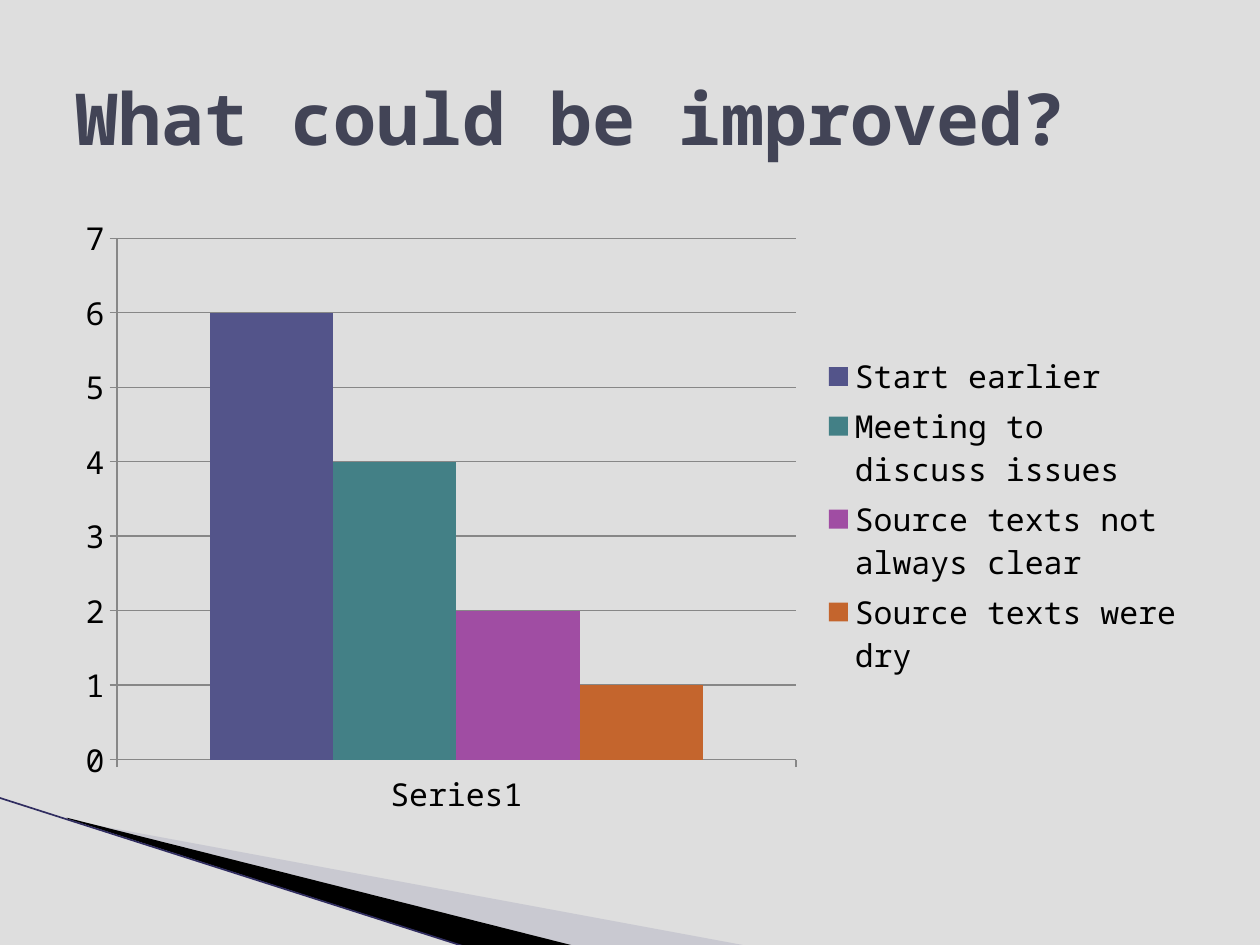
from lxml import etree
from pptx import Presentation, util as u
from pptx.chart.data import CategoryChartData
from pptx.dml.color import RGBColor
from pptx.enum import chart as ch, shapes, text
from pptx.oxml.ns import qn

FONT = "Noto Sans Mono"
GREY = "878787"
SERIES = [
    ("Start earlier", 6, "53548A"),
    ("Meeting to discuss issues", 4, "438086"),
    ("Source texts not always clear", 2, "A04DA3"),
    ("Source texts were dry", 1, "C4652D"),
]


def rgb(value):
    return RGBColor.from_string(value)


def set_all(target, formats):
    for name, value in formats.items():
        setattr(target, name, value)


def paint(fill, color):
    fill.solid()
    fill.fore_color.rgb = rgb(color)


class SlideBuilder:
    def __init__(self, slide):
        self.slide = slide

    def background(self, color):
        paint(self.slide.background.fill, color)

    def wedge(self, points, color, opacity=100):
        corners = [(u.Inches(x), u.Inches(y)) for x, y in points]
        builder = self.slide.shapes.build_freeform(*corners[0])
        builder.add_line_segments(corners[1:], close=True)
        wedge = builder.convert_to_shape()
        wedge.shadow.inherit = False
        wedge.line.fill.background()
        paint(wedge.fill, color)
        if opacity < 100:
            tint = wedge.fill._xPr.find(".//" + qn("a:srgbClr"))
            etree.SubElement(tint, qn("a:alpha"), val=str(opacity * 1000))

    def line(self, start, end, color, width):
        edge = self.slide.shapes.add_connector(
            shapes.MSO_CONNECTOR.STRAIGHT, *map(u.Inches, start + end))
        edge.line.color.rgb = rgb(color)
        edge.line.width = u.Pt(width)
        etree.SubElement(edge._element.spPr, qn("a:effectLst"))

    def title(self, wording, box, size, color):
        title = self.slide.shapes.title
        set_all(title, dict(zip(("left", "top", "width", "height"), map(u.Inches, box))))
        frame = title.text_frame
        frame.text = wording
        set_all(frame, {"word_wrap": True, "auto_size": text.MSO_AUTO_SIZE.NONE,
                        "vertical_anchor": text.MSO_ANCHOR.MIDDLE})
        heading = frame.paragraphs[0]
        heading.alignment = text.PP_ALIGN.LEFT
        set_all(heading.font, {"name": FONT, "size": u.Pt(size), "bold": True})
        heading.font.color.rgb = rgb(color)

    def columns(self, box, category, series):
        votes = CategoryChartData(number_format="General")
        votes.categories = [category]
        for name, value, _ in series:
            votes.add_series(name, [value])
        chart = self.slide.shapes.add_chart(
            ch.XL_CHART_TYPE.COLUMN_CLUSTERED, *map(u.Inches, box), votes).chart
        set_all(chart, {"has_title": False, "has_legend": True})
        set_all(chart.font, {"name": FONT, "size": u.Pt(18)})
        chart.font.color.rgb = rgb("000000")
        set_all(chart.legend, {"position": ch.XL_LEGEND_POSITION.RIGHT,
                               "include_in_layout": False})
        set_all(chart.plots[0], {"gap_width": 150, "overlap": 0,
                                 "vary_by_categories": False})
        for column, (_, _, color) in zip(chart.plots[0].series, series):
            paint(column.format.fill, color)

        # Axes and gridlines
        set_all(chart.value_axis, {"minimum_scale": 0, "maximum_scale": 7,
                                   "major_unit": 1, "has_major_gridlines": True})
        for axis in (chart.category_axis, chart.value_axis):
            axis.major_tick_mark = ch.XL_TICK_MARK.OUTSIDE
            axis.format.line.color.rgb = rgb(GREY)
        chart.value_axis.major_gridlines.format.line.color.rgb = rgb(GREY)


def main():
    deck = Presentation()
    set_all(deck, {"slide_width": u.Inches(10), "slide_height": u.Inches(7.5)})
    page = SlideBuilder(deck.slides.add_slide(deck.slide_layouts[5]))
    page.background("DEDEDE")

    # Swoosh in the lower left corner
    page.wedge([(0.55, 6.51), (5.95, 7.51), (4.56, 7.51), (0.55, 6.5)], "AAAABF", 40)
    page.wedge([(0.53, 6.49), (4.57, 7.51), (3.72, 7.52), (0.54, 6.5)], "000000")
    page.line((-0.01, 6.33), (3.71, 7.52), "302D60", 0.95)

    # Heading and survey results
    page.title("What could be improved?", (0.5, 0.3, 9, 1.25), 41, "424456")
    page.columns((0.5, 1.62, 9, 4.95), "Series1", SERIES)

    deck.save("out.pptx")


if __name__ == "__main__":
    main()
